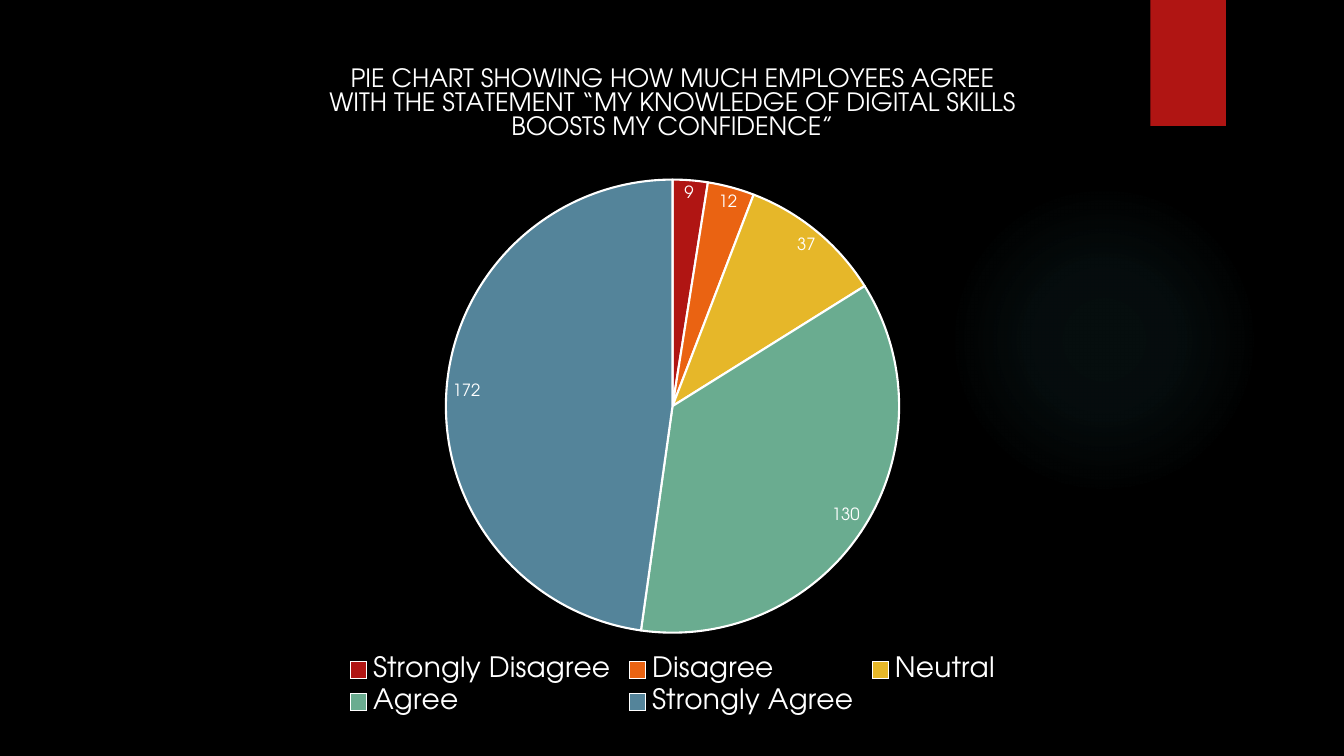
from lxml import etree
from pptx import Presentation
from pptx.chart.data import CategoryChartData
from pptx.dml.color import RGBColor
from pptx.enum.chart import XL_CHART_TYPE, XL_LABEL_POSITION, XL_LEGEND_POSITION
from pptx.enum.shapes import MSO_SHAPE
from pptx.oxml import parse_xml
from pptx.oxml.ns import nsdecls, qn
from pptx.util import Inches, Pt

PIE = XL_CHART_TYPE.PIE
BEST_FIT = XL_LABEL_POSITION.BEST_FIT
BOTTOM = XL_LEGEND_POSITION.BOTTOM
OVAL = MSO_SHAPE.OVAL
RECTANGLE = MSO_SHAPE.RECTANGLE

FONT = "TeX Gyre Adventor"
COLORS = {"background": "000000", "text": "FFFFFF", "glow": "50B9C1", "tab": "B01513"}
ANSWERS = [
    ("Strongly Disagree", 9, "B01513"),
    ("Disagree", 12, "EA6312"),
    ("Neutral", 37, "E6B729"),
    ("Agree", 130, "6AAC90"),
    ("Strongly Agree", 172, "54849A"),
]
TITLE = [
    "PIE CHART SHOWING HOW MUCH EMPLOYEES AGREE",
    "WITH THE STATEMENT “MY KNOWLEDGE OF DIGITAL SKILLS BOOSTS MY CONFIDENCE”",
]


def rgb(name):
    return RGBColor.from_string(COLORS[name])


def style_font(font, size):
    font.name = FONT
    font.size = Pt(size)
    font.bold = False
    font.color.rgb = rgb("text")


def add_plain_shape(slide, kind, left, top, width, height):
    shape = slide.shapes.add_shape(
        kind, Inches(left), Inches(top), Inches(width), Inches(height))
    shape.shadow.inherit = False
    shape.line.fill.background()
    return shape


def add_glow(slide):
    glow = add_plain_shape(slide, OVAL, 9.41, 1.83, 3.08, 3.08)
    stops = "".join(
        f'<a:gs pos="{position * 1000}"><a:srgbClr val="{COLORS["glow"]}">'
        f'<a:alpha val="{alpha * 1000}"/></a:srgbClr></a:gs>'
        for position, alpha in [(0, 7), (36, 6), (69, 0), (100, 0)])
    gradient = parse_xml(
        f'<a:gradFill {nsdecls("a")} rotWithShape="1"><a:gsLst>{stops}</a:gsLst>'
        '<a:path path="circle"><a:fillToRect l="50000" t="50000" r="50000" b="50000"/>'
        '</a:path></a:gradFill>')
    glow._element.spPr.find(qn("a:prstGeom")).addnext(gradient)


def add_tab(slide):
    tab = add_plain_shape(slide, RECTANGLE, 11.41, 0, 0.75, 1.25)
    tab.fill.solid()
    tab.fill.fore_color.rgb = rgb("tab")
    shadow = etree.SubElement(
        tab._element.spPr.find(qn("a:effectLst")), qn("a:outerShdw"),
        blurRad=str(Pt(3)), dist=str(Pt(2)), dir="5400000", rotWithShape="0")
    color = etree.SubElement(shadow, qn("a:srgbClr"), val="000000")
    etree.SubElement(color, qn("a:alpha"), val="45000")


def place_plot(chart, left, top, width, height):
    """Fix the pie's place as fractions of the chart area."""
    plot_area = chart._chartSpace.chart.plotArea
    for layout in plot_area.findall(qn("c:layout")):
        plot_area.remove(layout)
    values = "".join(
        f'<c:{tag} val="{value}"/>'
        for tag, value in [("x", left), ("y", top), ("w", width), ("h", height)])
    plot_area.insert(0, parse_xml(
        f'<c:layout {nsdecls("c")}><c:manualLayout><c:layoutTarget val="inner"/>'
        f'<c:xMode val="edge"/><c:yMode val="edge"/>{values}'
        '</c:manualLayout></c:layout>'))


def add_chart_title(chart):
    text_frame = chart.chart_title.text_frame
    text_frame.text = "\n".join(TITLE)
    for paragraph in text_frame.paragraphs:
        paragraph.line_spacing = 0.85
        style_font(paragraph.font, 18)
        for run in paragraph.runs:
            style_font(run.font, 18)
    chart.chart_title.include_in_layout = False


def add_answer_pie(slide):
    data = CategoryChartData()
    data.categories = [answer for answer, _, _ in ANSWERS]
    data.add_series("Series 1", [count for _, count, _ in ANSWERS])
    chart = slide.shapes.add_chart(
        PIE, Inches(1.97), Inches(0.44), Inches(9.4), Inches(6.71), data).chart
    style_font(chart.font, 10)
    add_chart_title(chart)
    place_plot(chart, 0.26, 0.2, 0.48, 0.67)

    # Slices
    plot = chart.plots[0]
    plot.vary_by_categories = True
    for index, (_, _, color) in enumerate(ANSWERS):
        slice_format = plot.series[0].points[index].format
        slice_format.fill.solid()
        slice_format.fill.fore_color.rgb = RGBColor.from_string(color)
        slice_format.line.color.rgb = rgb("text")
        slice_format.line.width = Pt(1.5)

    # Counts on the slices
    labels = plot.series[0].data_labels
    labels.show_value = True
    labels.show_percentage = False
    labels.show_legend_key = False
    labels.position = BEST_FIT
    style_font(labels.font, 12)

    # Legend
    chart.has_legend = True
    chart.legend.position = BOTTOM
    chart.legend.include_in_layout = False
    style_font(chart.legend.font, 20)


def main():
    presentation = Presentation()
    presentation.slide_width = Inches(13.33)
    presentation.slide_height = Inches(7.5)
    slide = presentation.slides.add_slide(presentation.slide_layouts[6])
    slide.background.fill.solid()
    slide.background.fill.fore_color.rgb = rgb("background")
    add_glow(slide)
    add_tab(slide)
    add_answer_pie(slide)
    presentation.save("out.pptx")


if __name__ == "__main__":
    main()
